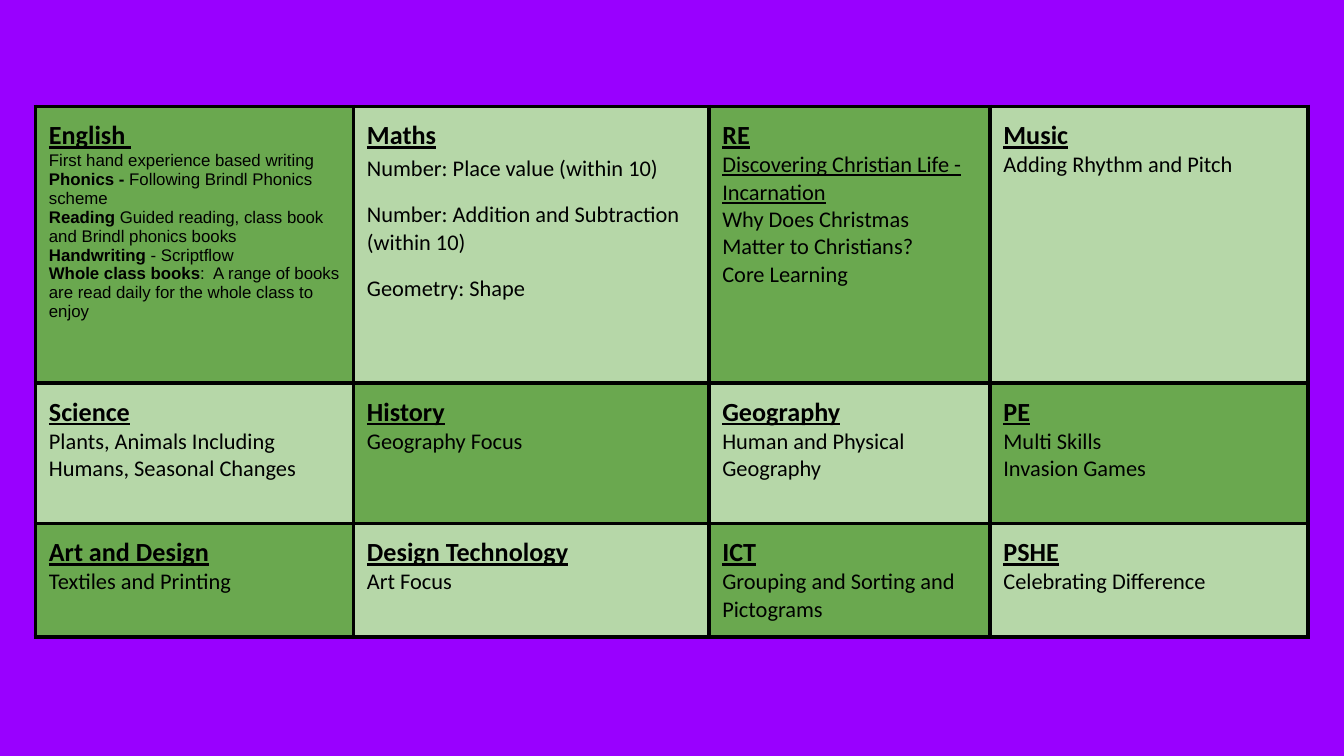
from lxml import etree
from pptx import Presentation
from pptx.dml.color import RGBColor
from pptx.oxml.ns import qn
from pptx.util import Pt

BLANK_LAYOUT = 6
PURPLE, BLACK = "9900FF", "000000"
GREENS = ("6AA84F", "B6D7A8")
COLUMN_WIDTHS = (170.4, 190.4, 150.6, 170.4)
ROW_HEIGHTS = (148.1, 75.3, 60.8)
INSET = 7.2
BORDER_WIDTH = 2.25

# Each subject: heading, then paragraphs made of (text, style) runs;
# style letters: b = bold, u = underlined
SUBJECTS = (
    (
        ("English ", [
            [("First hand experience based writing ", "")],
            [("Phonics -", "b"), (" Following Brindl Phonics scheme", "")],
            [("Reading ", "b"),
             ("Guided reading, class book and Brindl phonics books", "")],
            [("Handwriting", "b"), (" - Scriptflow", "")],
            [("Whole class books", "b"),
             (":  A range of books are read daily for the whole class to enjoy", "")],
        ]),
        ("Maths", [
            [("Number: Place value (within 10)", "")],
            [("Number: Addition and Subtraction (within 10)", "")],
            [("Geometry: Shape", "")],
        ]),
        ("RE", [
            [("Discovering Christian Life - Incarnation", "u")],
            [("Why Does Christmas Matter to Christians?", "")],
            [("Core Learning", "")],
        ]),
        ("Music", [[("Adding Rhythm and Pitch", "")]]),
    ),
    (
        ("Science", [[("Plants, Animals Including Humans, Seasonal Changes", "")]]),
        ("History", [[("Geography Focus", "")]]),
        ("Geography", [[("Human and Physical Geography", "")]]),
        ("PE", [[("Multi Skills", "")], [("Invasion Games", "")]]),
    ),
    (
        ("Art and Design", [[("Textiles and Printing", "")]]),
        ("Design Technology", [[("Art Focus", "")]]),
        ("ICT", [[("Grouping and Sorting and Pictograms", "")]]),
        ("PSHE", [[("Celebrating Difference", "")]]),
    ),
)
BODY_FONTS = {"English ": ("Arial", 9)}
DEFAULT_BODY_FONT = ("Calibri", 12)


def set_fill(fill, color):
    fill.solid()
    fill.fore_color.rgb = RGBColor.from_string(color)


def add_run(para, text, style, font_name, size):
    run = para.add_run()
    run.text = text
    run.font.name = font_name
    run.font.size = Pt(size)
    run.font.bold = "b" in style
    run.font.underline = "u" in style
    run.font.color.rgb = RGBColor.from_string(BLACK)


def set_borders(cell, color, width):
    properties = cell._tc.get_or_add_tcPr()
    # Border lines must come before the fill
    for position, side in enumerate(("a:lnL", "a:lnR", "a:lnT", "a:lnB")):
        line = etree.Element(qn(side), w=str(Pt(width)))
        solid = etree.SubElement(line, qn("a:solidFill"))
        etree.SubElement(solid, qn("a:srgbClr"), val=color)
        properties.insert(position, line)


def space_topics(paras):
    """Spread the topics of a cell apart."""
    paras[0].line_spacing = 1.15
    for para in paras[1:]:
        para.space_before = Pt(10)
    paras[-1].space_after = Pt(10)


def fill_cell(cell, heading, body, color):
    set_fill(cell.fill, color)
    set_borders(cell, BLACK, BORDER_WIDTH)
    cell.margin_left = cell.margin_right = Pt(INSET)
    cell.margin_top = cell.margin_bottom = Pt(INSET)

    frame = cell.text_frame
    add_run(frame.paragraphs[0], heading, "bu", "Calibri", 14)
    font_name, size = BODY_FONTS.get(heading, DEFAULT_BODY_FONT)
    for runs in body:
        para = frame.add_paragraph()
        for text, style in runs:
            add_run(para, text, style, font_name, size)
    if heading == "Maths":
        space_topics(frame.paragraphs[1:])


def add_subject_table(page, left, top):
    frame = page.shapes.add_table(
        len(ROW_HEIGHTS), len(COLUMN_WIDTHS), Pt(left), Pt(top),
        Pt(sum(COLUMN_WIDTHS)), Pt(sum(ROW_HEIGHTS)))
    table = frame.table
    table.first_row = table.horz_banding = False
    for column, width in zip(table.columns, COLUMN_WIDTHS):
        column.width = Pt(width)
    for row, height in zip(table.rows, ROW_HEIGHTS):
        row.height = Pt(height)

    # The two greens alternate like a chessboard
    for r, subjects in enumerate(SUBJECTS):
        for c, (heading, body) in enumerate(subjects):
            fill_cell(table.cell(r, c), heading, body, GREENS[(r + c) % 2])


def main():
    deck = Presentation()
    deck.slide_width, deck.slide_height = Pt(720), Pt(405)
    page = deck.slides.add_slide(deck.slide_layouts[BLANK_LAYOUT])
    set_fill(page.background.fill, PURPLE)
    add_subject_table(page, 19, 57)
    deck.save("out.pptx")


if __name__ == "__main__":
    main()
